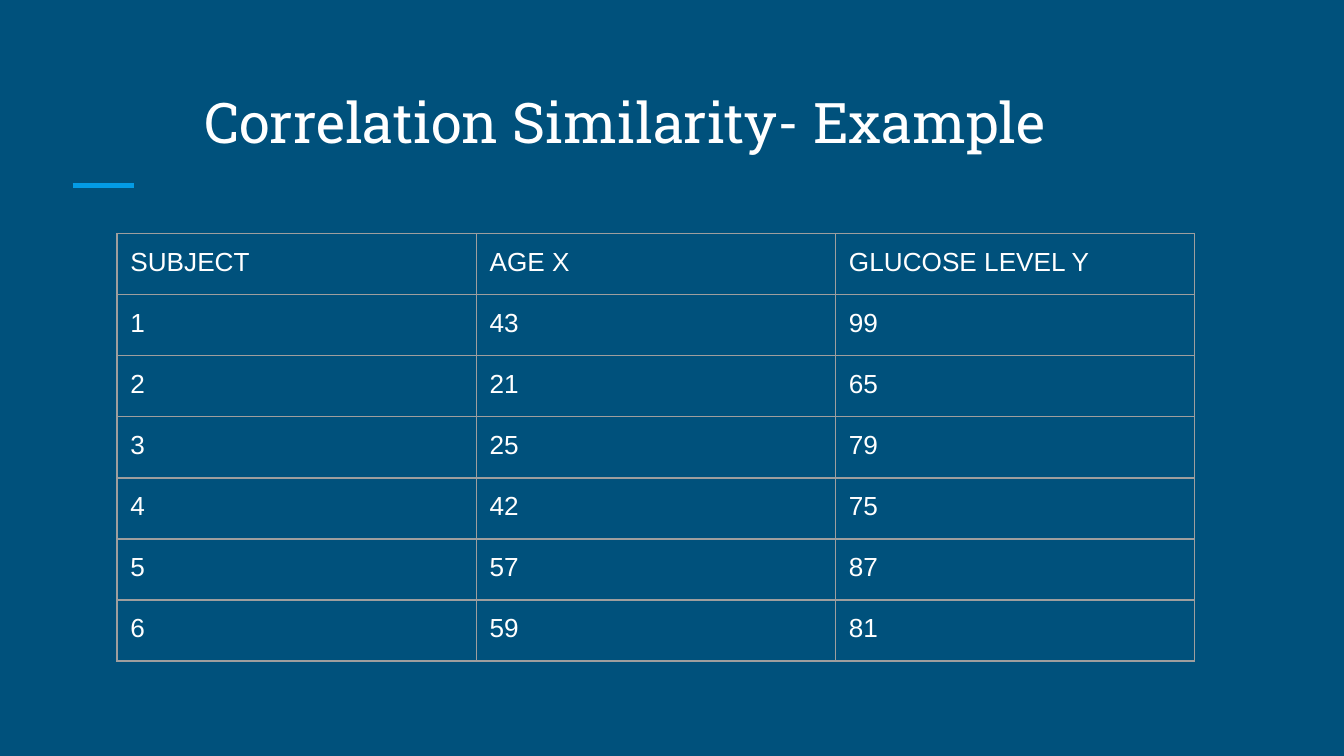
import pptx
import pptx.util
import pptx.dml.color
import pptx.enum.shapes
import pptx.enum.text
import pptx.oxml
import pptx.oxml.ns

Inches = pptx.util.Inches
Pt = pptx.util.Pt


def color(code):
    return pptx.dml.color.RGBColor.from_string(code)


class Deck:
    ground, ink, accent, rule = "00517C", "FFFFFF", "039BE5", "9E9E9E"
    head, body = "Roboto Slab", "Arial"
    pad = Inches(0.1)

    def __init__(self, width, ratio):
        self.prs = pptx.Presentation()
        self.prs.slide_width = Inches(width)
        self.prs.slide_height = Inches(width / ratio)

    def add(self):
        self.slide = self.prs.slides.add_slide(self.prs.slide_layouts[5])
        fill = self.slide.background.fill
        fill.solid()
        fill.fore_color.rgb = color(self.ground)

    def inset(self, box):
        box.margin_left = box.margin_right = self.pad
        box.margin_top = box.margin_bottom = self.pad

    def font(self, para, name, size):
        para.font.name = name
        para.font.size = Pt(size)
        para.font.bold = False
        para.font.color.rgb = color(self.ink)

    def title(self, text, box, indent):
        shape = self.slide.shapes.title
        shape.left, shape.top, shape.width, shape.height = map(Inches, box)
        frame = shape.text_frame
        frame.text = text
        frame.word_wrap = True
        frame.auto_size = pptx.enum.text.MSO_AUTO_SIZE.NONE
        frame.vertical_anchor = pptx.enum.text.MSO_ANCHOR.BOTTOM
        self.inset(frame)
        para = frame.paragraphs[0]
        para.alignment = pptx.enum.text.PP_ALIGN.LEFT
        self.font(para, self.head, 30)
        props = para._p.get_or_add_pPr()
        props.set("marL", str(Inches(indent)))
        props.set("indent", "0")

    def line(self, left, right, y, width):
        kind = pptx.enum.shapes.MSO_CONNECTOR.STRAIGHT
        line = self.slide.shapes.add_connector(
            kind, Inches(left), Inches(y), Inches(right), Inches(y))
        line.line.color.rgb = color(self.accent)
        line.line.width = Pt(width)
        # An empty effect list removes the theme shadow
        line._element.spPr.append(pptx.oxml.parse_xml(
            f'<a:effectLst {pptx.oxml.ns.nsdecls("a")}/>'))

    def border(self, cell, width):
        props = cell._tc.get_or_add_tcPr()
        for side in "LRTB":
            props.append(pptx.oxml.parse_xml(
                f'<a:ln{side} {pptx.oxml.ns.nsdecls("a")} w="{Pt(width)}">'
                f'<a:solidFill><a:srgbClr val="{self.rule}"/></a:solidFill>'
                f'</a:ln{side}>'))

    def table(self, rows, box):
        table = self.slide.shapes.add_table(
            len(rows), len(rows[0]), *map(Inches, box)).table
        table.first_row = table.horz_banding = False
        for r, row in enumerate(rows):
            for c, value in enumerate(row):
                cell = table.cell(r, c)
                cell.text = str(value)
                self.inset(cell)
                self.font(cell.text_frame.paragraphs[0], self.body, 14)
                self.border(cell, 0.75)
                cell.fill.background()


def main():
    deck = Deck(10, 16 / 9)
    deck.add()

    # Heading with its accent line
    deck.line(0.54, 1, 1.38, 3)
    deck.title("Correlation Similarity- Example", (0.42, 0.5, 9.15, 0.75), 1)

    # Age and glucose of each subject
    ages = (43, 21, 25, 42, 57, 59)
    levels = (99, 65, 79, 75, 87, 81)
    rows = [("SUBJECT", "AGE X", "GLUCOSE LEVEL Y")]
    rows += zip(range(1, 7), ages, levels)
    deck.table(rows, (0.87, 1.74, 8.02, 3.18))

    deck.prs.save("out.pptx")


if __name__ == "__main__":
    main()
